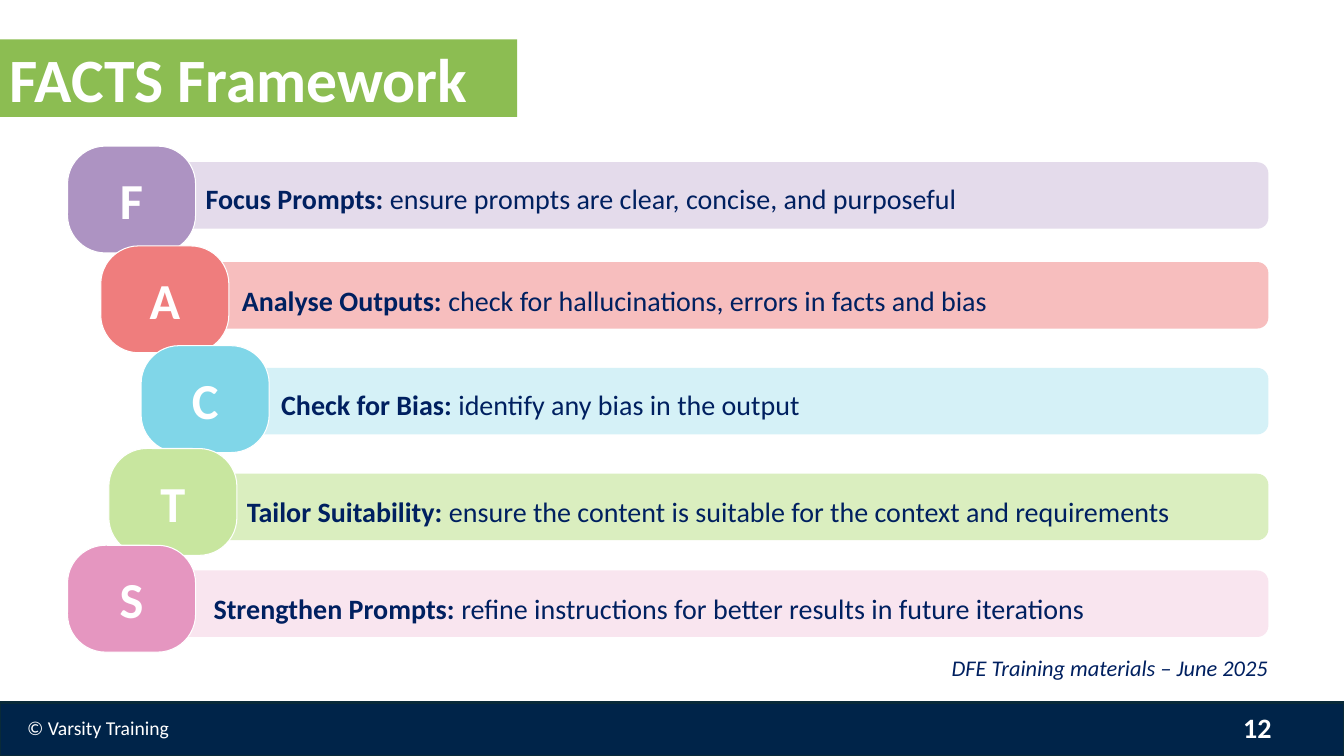
from lxml import etree
from pptx import Presentation
from pptx.dml.color import RGBColor
from pptx.enum.shapes import MSO_SHAPE
from pptx.enum.text import MSO_ANCHOR, PP_ALIGN
from pptx.oxml.ns import qn
from pptx.util import Inches, Pt

RECT, ROUND = MSO_SHAPE.RECTANGLE, MSO_SHAPE.ROUNDED_RECTANGLE
TOP, MIDDLE = MSO_ANCHOR.TOP, MSO_ANCHOR.MIDDLE
LEFT, CENTER, RIGHT = PP_ALIGN.LEFT, PP_ALIGN.CENTER, PP_ALIGN.RIGHT

WHITE, NAVY = "FFFFFF", "002060"

STEPS = [
    ("F", "Focus Prompts: ", "ensure prompts are clear, concise, and purposeful",
     "AD93C2", "E4DBEB", (0.67, 1.45), (1.74, 1.61), (1.94, 1.65)),
    ("A", "Analyse Outputs: ", "check for hallucinations, errors in facts and bias",
     "EF7D7D", "F7BEBE", (1, 2.44), (1.87, 2.6), (2.3, 2.66)),
    ("C", "Check for Bias: ", "identify any bias in the output",
     "80D6E8", "D5F1F7", (1.4, 3.43), (1.74, 3.65), (2.69, 3.69)),
    ("T", "Tailor Suitability: ",
     "ensure the content is suitable for the context and requirements",
     "C8E69F", "DAEEBF", (1.08, 4.45), (1.74, 4.7), (2.35, 4.76)),
    ("S", "Strengthen Prompts: ",
     "refine instructions for better results in future iterations",
     "E596C0", "F9E5EF", (0.67, 5.41), (1.66, 5.66), (2.02, 5.72)),
]
BAR_END = 12.58


def color(code):
    return RGBColor.from_string(code)


class Deck:
    font = "Calibri"

    def __init__(self, wide, high):
        self.show = Presentation()
        self.show.slide_width = Inches(wide)
        self.show.slide_height = Inches(high)
        self.slide = self.show.slides.add_slide(self.show.slide_layouts[6])

    def label(self, shape, runs, align=LEFT, anchor=TOP, pad=0.05, space=None):
        frame = shape.text_frame
        look = {
            "word_wrap": True, "vertical_anchor": anchor,
            "margin_left": Inches(0.1), "margin_right": Inches(0.1),
            "margin_top": Inches(pad), "margin_bottom": Inches(pad),
        }
        for name, value in look.items():
            setattr(frame, name, value)
        para = frame.paragraphs[0]
        para.alignment = align
        para.line_spacing = space
        for text, size, code, style in runs:
            run = para.add_run()
            run.text = text
            run.font.color.rgb = color(code)
            for name, value in {"name": self.font, "size": Pt(size), **style}.items():
                setattr(run.font, name, value)

    def shape(self, kind, box, fill, line=None, width=0.75, round=None, alpha=None):
        item = self.slide.shapes.add_shape(kind, *map(Inches, box))
        item.shadow.inherit = False
        item.fill.solid()
        item.fill.fore_color.rgb = color(fill)
        if line:
            item.line.color.rgb = color(line)
            item.line.width = Pt(width)
        else:
            item.line.fill.background()
        if round is not None:
            item.adjustments[0] = round
        if alpha is not None:
            tone = item.element.spPr.find(qn("a:solidFill"))[0]
            etree.SubElement(tone, qn("a:alpha")).set("val", str(alpha * 1000))
        return item

    def text(self, box, runs, **look):
        item = self.slide.shapes.add_textbox(*map(Inches, box))
        self.label(item, runs, **look)

    def save(self):
        self.show.save("out.pptx")


def main():
    deck = Deck(13.33, 7.5)
    bold, plain = {"bold": True}, {"bold": False}

    deck.shape(RECT, (0, 6.97, 13.33, 0.53), "002449", "092A39", 1.5)
    deck.text((0.17, 7.05, 3, 0.4), [("© Varsity Training", 14, WHITE, plain)])

    for _, _, _, _, pale, _, (left, top), _ in STEPS:
        deck.shape(ROUND, (left, top, BAR_END - left, 0.66), pale, round=0.167)
    for mark, head, body, tint, _, badge, _, (left, top) in STEPS:
        tile = deck.shape(ROUND, (*badge, 1.27, 1.06), tint, WHITE, round=0.355)
        deck.label(tile, [(mark, 36, WHITE, bold)], align=CENTER, anchor=MIDDLE)
        deck.text((left, top, BAR_END - left, 0.57),
                  [(head, 20, NAVY, bold), (body, 20, NAVY, plain)],
                  pad=0.1, space=1.15)

    deck.text((11.88, 6.93, 0.83, 0.57), [("12", 20, WHITE, bold)],
              align=RIGHT, anchor=MIDDLE)
    deck.text((9.34, 6.44, 3.9, 0.4),
              [("DFE Training materials – June 2025", 16, NAVY, {"italic": True})])
    title = deck.shape(RECT, (0, 0.39, 5.13, 0.77), "7DB43B", alpha=88)
    deck.label(title, [("FACTS Framework", 44, WHITE, bold)], anchor=MIDDLE)
    deck.save()


if __name__ == "__main__":
    main()
